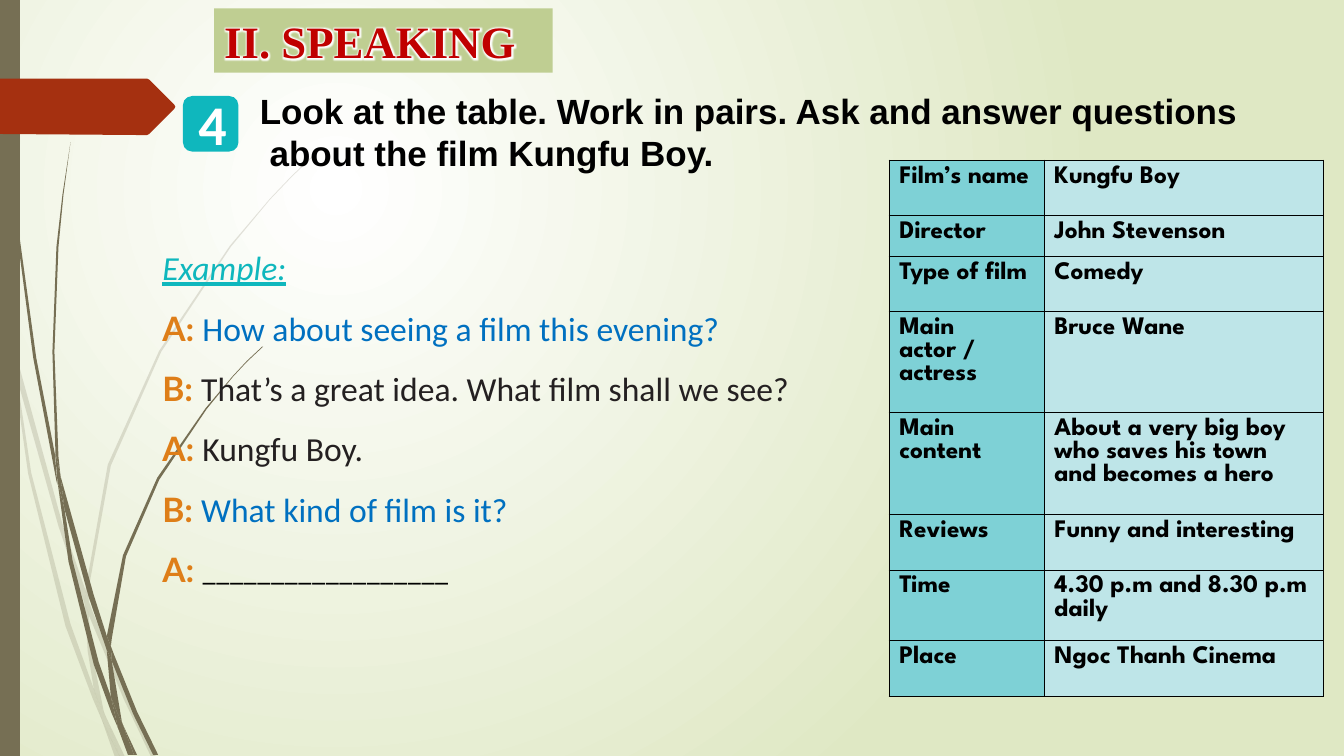
"""Build the speaking lesson slide with a film table and a sample dialogue."""
from dataclasses import dataclass
from typing import Any

import pptx
import pptx.dml.color
import pptx.enum.shapes
import pptx.enum.text
import pptx.oxml.ns
import pptx.util
from lxml import etree

Cm = pptx.util.Cm
Pt = pptx.util.Pt
RGB = pptx.dml.color.RGBColor.from_string
qn = pptx.oxml.ns.qn
SHAPE = pptx.enum.shapes.MSO_SHAPE
GRID = Cm(0.0254)


@dataclass(frozen=True)
class Theme:
    light: str = "FFFFFF"
    meadow: str = "DFE8C4"
    stem: str = "766F54"
    arrow: str = "A53010"
    teal: str = "0FB7BD"
    banner: str = "BFCE92"
    title: str = "C00000"
    black: str = "000000"
    speaker: str = "DE7E18"
    blue: str = "0070C0"
    ink: str = "242021"
    label: str = "7ED1D6"
    value: str = "BEE5E8"
    table_size: int = 18
    dialogue_size: int = 24
    task_size: int = 25
    title_size: int = 32
    number_size: int = 40


@dataclass(frozen=True)
class Box:
    left: float
    top: float
    width: float
    height: float

    def lengths(self) -> tuple[int, ...]:
        return tuple(Cm(v) for v in (self.left, self.top, self.width, self.height))


@dataclass(frozen=True)
class Run:
    text: str
    font: str
    size: int
    color: str
    bold: bool = False
    italic: bool = False
    underline: bool = False


@dataclass(frozen=True)
class Panel:
    kind: Any
    box: Box
    color: str


@dataclass(frozen=True)
class Row:
    label: str
    value: str
    height: float


T = Theme()
PALE_BLADES = (
    ((11, 350), (9, 322), (0, 282), (0, 299), (10, 344)),
    ((58, 522), (84, 599), (85, 586), (62, 520), (14, 345), (17, 376)),
    ((92, 607), (88, 596), (88, 610), (123, 694), (150, 751), (155, 751), (127, 692)),
    ((119, 751), (124, 751), (105, 711)),
    ((93, 683), (70, 619), (31, 469), (17, 376), (11, 350), (28, 470), (65, 621),
     (92, 693), (101, 714), (99, 707)),
    ((84, 599), (87, 646), (93, 683), (96, 692), (105, 711), (103, 706), (91, 646),
     (88, 610), (88, 608)),
    ((88, 584), (110, 462), (160, 349), (229, 245), (268, 198), (290, 175), (312, 154),
     (312, 153), (289, 175), (268, 197), (228, 244), (158, 348), (107, 461), (85, 584),
     (85, 586), (88, 596)),
    ((101, 714), (114, 751), (119, 751)),
    ((88, 608), (88, 610), (88, 596), (85, 586), (84, 599)),
    ((96, 692), (93, 683), (99, 707), (101, 714), (119, 751), (105, 711)),
)
DARK_BLADES = (
    ((7, 110), (17, 233), (33, 355), (56, 477), (57, 481), (55, 457), (55, 453),
     (36, 355), (19, 232), (8, 109), (5, 48), (4, 0), (3, 0), (4, 48)),
    ((88, 592), (106, 645), (106, 631), (93, 590), (60, 472), (64, 505)),
    ((113, 649), (110, 641), (111, 656), (132, 708), (152, 749), (157, 749), (136, 706)),
    ((110, 691), (98, 657), (72, 556), (64, 505), (57, 477), (68, 557), (93, 659),
     (111, 708), (117, 722), (116, 717)),
    ((60, 472), (58, 453), (54, 349), (58, 245), (63, 193), (70, 141), (62, 193),
     (56, 245), (52, 349), (55, 449)),
    ((133, 749), (136, 749), (122, 719)),
    ((57, 477), (64, 505), (60, 472), (55, 449), (55, 453)),
    ((111, 633), (125, 552), (158, 476), (205, 406), (231, 374), (245, 359), (261, 344),
     (260, 344), (245, 358), (231, 373), (204, 405), (156, 474), (122, 551), (106, 631),
     (110, 641)),
    ((117, 722), (127, 749), (131, 749)),
    ((106, 645), (110, 691), (116, 706), (122, 719), (121, 716), (111, 656), (109, 651)),
    ((106, 645), (109, 651), (111, 656), (110, 641), (106, 631)),
    ((116, 706), (110, 691), (116, 717), (117, 722), (130, 749), (133, 749), (122, 719)),
)
ARROW = ((173, 108), (148, 133), (146, 134), (136, 134), (0, 133), (0, 78), (136, 78),
         (146, 78), (148, 79), (173, 104), (174, 106))
STEM = Panel(SHAPE.RECTANGLE, Box(0, 0, 0.5, 19.05), T.stem)
BADGE = Panel(SHAPE.ROUNDED_RECTANGLE, Box(4.61, 2.42, 1.4, 1.4), T.teal)
BANNER = Panel(SHAPE.RECTANGLE, Box(5.4, 0.21, 8.53, 1.62), T.banner)
TASK = tuple((Run(text, "Arial", T.task_size, T.black, bold=True),) for text in (
    "Look at the table. Work in pairs. Ask and answer questions",
    " about the film Kungfu Boy."))
DIALOGUE = (
    ("A: ", "How about seeing a film this evening?", "Calibri", T.blue),
    ("B: ", "That’s a great idea. What film shall we see?", "Calibri", T.ink),
    ("A: ", "Kungfu Boy.", "Calibri", T.ink),
    ("B: ", "What kind of film is it?", "Calibri", T.blue),
    ("A: ", "__________________", "League Spartan", T.black),
)
FILM = (
    Row("Film’s name", "Kungfu Boy", 1.4),
    Row("Director", "John Stevenson", 1.03),
    Row("Type of film", "Comedy", 1.39),
    Row("Main actor / actress", "Bruce Wane", 2.54),
    Row("Main content", "About a very big boy who saves his town and becomes a hero", 2.57),
    Row("Reviews", "Funny and interesting", 1.4),
    Row("Time", "4.30 p.m and 8.30 p.m daily", 1.76),
    Row("Place", "Ngoc Thanh Cinema", 1.4),
)


def add_run(p: Any, run: Run) -> Any:
    r = p.add_run()
    r.text = run.text
    r.font.name, r.font.size = run.font, Pt(run.size)
    r.font.bold, r.font.italic, r.font.underline = run.bold, run.italic, run.underline
    r.font.color.rgb = RGB(run.color)
    return r


def paint(sp: Any, color: str) -> None:
    sp.shadow.inherit = False
    sp.fill.solid()
    sp.fill.fore_color.rgb = RGB(color)
    sp.line.fill.background()


def add_panel(s: Any, panel: Panel) -> Any:
    sp = s.shapes.add_shape(panel.kind, *panel.box.lengths())
    paint(sp, panel.color)
    return sp


def add_text(s: Any, box: Box, lines: Any, spacing: float = 1.0, align: Any = None) -> None:
    tf = s.shapes.add_textbox(*box.lengths()).text_frame
    tf.word_wrap = True
    for i, line in enumerate(lines):
        p = tf.add_paragraph() if i else tf.paragraphs[0]
        p.line_spacing, p.alignment = spacing, align
        for run in line:
            add_run(p, run)


def add_outline(s: Any, points: tuple[tuple[int, int], ...], color: str,
                opacity: int = 100) -> None:
    fb = s.shapes.build_freeform(*points[0], scale=GRID)
    fb.add_line_segments(points[1:], close=True)
    sp = fb.convert_to_shape()
    paint(sp, color)
    if opacity < 100:
        srgb = next(sp.element.spPr.iter(qn("a:srgbClr")))
        etree.SubElement(srgb, qn("a:alpha"), val=str(opacity * 1000))


def paint_background(s: Any) -> None:
    fill = s.background.fill
    fill.gradient()
    for stop, color in zip(fill.gradient_stops, (T.light, T.meadow)):
        stop.color.rgb = RGB(color)
    grad = next(s.element.iter(qn("a:gradFill")))
    radial = etree.Element(qn("a:path"), path="circle")
    etree.SubElement(radial, qn("a:fillToRect"), l="50000", t="50000", r="100000", b="100000")
    grad.replace(grad.find(qn("a:lin")), radial)


def add_banner(s: Any) -> None:
    p = add_panel(s, BANNER).text_frame.paragraphs[0]
    p.alignment = pptx.enum.text.PP_ALIGN.LEFT
    r = add_run(p, Run("II. SPEAKING", "Times New Roman", T.title_size, T.title, bold=True))
    effects = etree.Element(qn("a:effectLst"))
    glow = etree.SubElement(effects, qn("a:glow"), rad="63500")
    etree.SubElement(glow, qn("a:srgbClr"), val=T.light)
    next(r.font._element.iter(qn("a:solidFill"))).addnext(effects)


def add_film_table(s: Any) -> None:
    box = Box(22.41, 4.04, 10.95, sum(row.height for row in FILM))
    table = s.shapes.add_table(len(FILM), 2, *box.lengths()).table
    table.columns[0].width, table.columns[1].width = Cm(3.91), Cm(7.04)
    for i, row in enumerate(FILM):
        table.rows[i].height = Cm(row.height)
        for j, (text, color) in enumerate(((row.label, T.label), (row.value, T.value))):
            cell = table.cell(i, j)
            cell.fill.solid()
            cell.fill.fore_color.rgb = RGB(color)
            add_run(cell.text_frame.paragraphs[0],
                    Run(text, "League Spartan", T.table_size, T.black, bold=True))
            for k, side in enumerate(("a:lnL", "a:lnR", "a:lnT", "a:lnB")):
                ln = etree.Element(qn(side), w=str(Pt(1)))
                fill = etree.SubElement(ln, qn("a:solidFill"))
                etree.SubElement(fill, qn("a:srgbClr"), val=T.black)
                cell._tc.tcPr.insert(k, ln)


def main() -> None:
    prs = pptx.Presentation()
    prs.slide_width, prs.slide_height = Cm(33.87), Cm(19.05)
    s = prs.slides.add_slide(prs.slide_layouts[6])
    paint_background(s)
    for blades, opacity in ((PALE_BLADES, 20), (DARK_BLADES, 100)):
        for points in blades:
            add_outline(s, points, T.stem, opacity)
    add_panel(s, STEM)
    add_outline(s, ARROW, T.arrow)
    add_text(s, Box(6.3, 2.13, 27.5, 2.39), TASK)
    add_panel(s, BADGE)
    number = Run("4", "Calibri", T.number_size, T.light, bold=True)
    add_text(s, Box(4.75, 2.13, 1.09, 1.96), ((number,),), align=pptx.enum.text.PP_ALIGN.CENTER)
    add_banner(s)
    lines = [(Run("Example:", "Calibri", T.dialogue_size, T.teal, italic=True, underline=True),)]
    lines += [(Run(who, "Lato", T.dialogue_size, T.speaker, bold=True),
               Run(text, font, T.dialogue_size, color)) for who, text, font, color in DIALOGUE]
    add_text(s, Box(3.84, 5.59, 18.19, 9.5), lines, spacing=1.5)
    add_film_table(s)
    prs.save("out.pptx")


if __name__ == "__main__":
    main()
